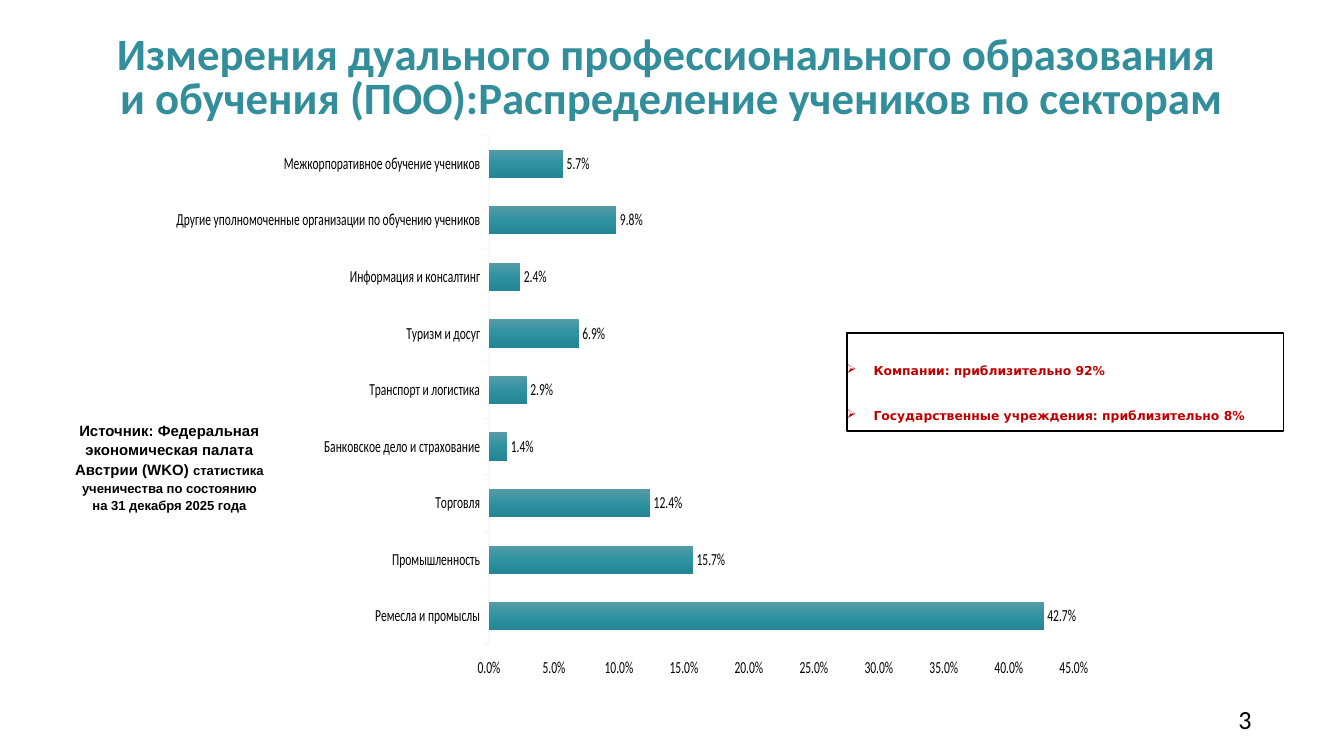
from dataclasses import dataclass

from pptx import Presentation
from pptx.chart.data import CategoryChartData
from pptx.dml.color import RGBColor
from pptx.enum.chart import XL_CHART_TYPE as ChartType, XL_LABEL_POSITION as LabelPos
from pptx.enum.chart import XL_TICK_MARK as TickMark
from pptx.enum.shapes import MSO_SHAPE as Shape
from pptx.enum.text import MSO_ANCHOR as Anchor, MSO_AUTO_SIZE as AutoSize, PP_ALIGN as Align
from pptx.oxml import parse_xml
from pptx.oxml.ns import nsdecls, qn
from pptx.util import Pt

EMU_PER_PX = 9525
TITLE_ONLY = 5


@dataclass(frozen=True)
class Theme:
    ink: str = "000000"
    title: str = "338E9C"
    accent: str = "C00000"
    grid: str = "F2F2F2"
    bar_stops: tuple = ((0, "569CA8"), (50, "2E92A1"), (100, "248594"))
    font: str = "Calibri"
    source_font: str = "Arial"
    bullet_font: str = "DejaVu Sans"
    title_size: float = 24
    number_size: float = 14
    chart_size: float = 9
    source_size: float = 8
    detail_size: float = 7
    bullet_size: float = 6.6


THEME = Theme()

TITLE = [
    "Измерения дуального профессионального образования ",
    "и обучения (ПОО):Распределение учеников по секторам",
]
SECTORS = {
    "Ремесла и промыслы": 0.427,
    "Промышленность": 0.157,
    "Торговля": 0.124,
    "Банковское дело и страхование": 0.014,
    "Транспорт и логистика": 0.029,
    "Туризм и досуг": 0.069,
    "Информация и консалтинг": 0.024,
    "Другие уполномоченные организации по обучению учеников": 0.098,
    "Межкорпоративное обучение учеников": 0.057,
}
SOURCE = "Источник: Федеральная экономическая палата Австрии (WKO) "
SOURCE_DETAIL = "статистика ученичества по состоянию на 31 декабря 2025 года"
SHARES = [
    "Компании: приблизительно 92%",
    "Государственные учреждения: приблизительно 8%",
]


def px(value):
    return value * EMU_PER_PX


def place(shape, left, top, width, height):
    shape.left, shape.top = px(left), px(top)
    shape.width, shape.height = px(width), px(height)


def set_font(font, size, color=THEME.ink, name=THEME.font, bold=False):
    font.size, font.name, font.bold = Pt(size), name, bold
    font.color.rgb = RGBColor.from_string(color)


def add_span(para, text, **style):
    span = para.add_run()
    span.text = text
    set_font(span.font, **style)


def set_frame(frame, wrap=True, anchor=Anchor.TOP, inset=0):
    frame.auto_size = AutoSize.NONE
    frame.word_wrap = wrap
    frame.vertical_anchor = anchor
    if inset is not None:
        frame.margin_left = frame.margin_right = px(inset)
        frame.margin_top = frame.margin_bottom = px(inset)


def write_lines(frame, lines, align, spacing=None, bullet=None, **style):
    """Write one paragraph for each line; return the paragraphs."""
    for index, text in enumerate(lines):
        para = frame.add_paragraph() if index else frame.paragraphs[0]
        para.alignment = align
        para.space_before = Pt(0)
        if spacing:
            para.line_spacing = spacing
        if bullet:
            add_bullet(para, bullet, style["color"])
        add_span(para, text, **style)
    return frame.paragraphs


def add_bullet(para, mark, color):
    props = para._p.get_or_add_pPr()
    props.set("marL", str(px(19)))
    props.set("indent", str(px(-19)))
    props.append(parse_xml(
        f'<a:buClr {nsdecls("a")}><a:srgbClr val="{color}"/></a:buClr>'))
    props.append(parse_xml(f'<a:buChar {nsdecls("a")} char="{mark}"/>'))


def set_line(line, color, width, opacity):
    line.width = Pt(width)
    line.color.rgb = RGBColor.from_string(color)
    solid = line._ln.find(qn("a:solidFill"))
    solid[0].append(parse_xml(
        f'<a:alpha {nsdecls("a")} val="{opacity * 1000}"/>'))


def fill_bars(series):
    stops = "".join(
        f'<a:gs pos="{pos * 1000}"><a:srgbClr val="{color}"/></a:gs>'
        for pos, color in THEME.bar_stops)
    series._element.get_or_add_spPr().insert(0, parse_xml(
        f'<a:gradFill {nsdecls("a")} rotWithShape="1"><a:gsLst>{stops}</a:gsLst>'
        '<a:lin ang="5400000" scaled="0"/></a:gradFill>'))


def set_plot_area(chart, x, y, w, h):
    area = chart._chartSpace.chart.plotArea
    for old in area.findall(qn("c:layout")):
        area.remove(old)
    sizes = "".join(f'<c:{key} val="{value}"/>'
                    for key, value in zip("xywh", (x, y, w, h)))
    area.insert(0, parse_xml(
        f'<c:layout {nsdecls("c")}><c:manualLayout><c:layoutTarget val="inner"/>'
        f'<c:xMode val="edge"/><c:yMode val="edge"/>{sizes}'
        '</c:manualLayout></c:layout>'))


def add_sector_chart(page, left, top, width, height):
    data = CategoryChartData(number_format="0.0%")
    data.categories = list(SECTORS)
    data.add_series("Series 1", SECTORS.values())
    chart = page.shapes.add_chart(
        ChartType.BAR_CLUSTERED, px(left), px(top), px(width), px(height), data).chart
    chart.has_title = chart.has_legend = False
    set_font(chart.font, THEME.chart_size)

    # Bars and their labels
    plot = chart.plots[0]
    plot.gap_width = 100
    plot.vary_by_categories = False
    fill_bars(plot.series[0])
    plot.has_data_labels = True
    labels = plot.data_labels
    labels.show_value = True
    labels.position = LabelPos.OUTSIDE_END
    labels.number_format, labels.number_format_is_linked = "0.0%", False
    set_font(labels.font, THEME.chart_size)

    # Axes
    sectors, shares = chart.category_axis, chart.value_axis
    for axis in (sectors, shares):
        axis.major_tick_mark = TickMark.OUTSIDE
        set_font(axis.tick_labels.font, THEME.chart_size)
    set_line(sectors.format.line, THEME.grid, 1, 54)
    shares.minimum_scale, shares.maximum_scale, shares.major_unit = 0, 0.45, 0.05
    shares.tick_labels.number_format = "0.0%"
    shares.tick_labels.number_format_is_linked = False
    shares.format.line.fill.background()
    shares.has_major_gridlines = True
    set_line(shares.major_gridlines.format.line, THEME.grid, 0.75, 10)
    # Sector names hang to the left of the plot
    set_plot_area(chart, 0, 0.08, 0.86, 0.75)


def add_text(page, left, top, width, height):
    return page.shapes.add_textbox(px(left), px(top), px(width), px(height)).text_frame


def add_shares_box(page, left, top, width, height):
    box = page.shapes.add_shape(
        Shape.RECTANGLE, px(left), px(top), px(width), px(height))
    box.shadow.inherit = False
    box.fill.background()
    box.line.color.rgb = RGBColor.from_string(THEME.ink)
    box.line.width = Pt(0.75)
    set_frame(box.text_frame)
    paras = write_lines(box.text_frame, SHARES, Align.LEFT, Pt(24), bullet="➢",
                        size=THEME.bullet_size, color=THEME.accent,
                        name=THEME.bullet_font, bold=True)
    paras[-1].space_after = Pt(9)


def main():
    deck = Presentation()
    deck.slide_width, deck.slide_height = px(960), px(540)
    page = deck.slides.add_slide(deck.slide_layouts[TITLE_ONLY])

    # Title
    title = page.shapes.title
    place(title, 53, 13, 853, 87)
    set_frame(title.text_frame, wrap=False, anchor=Anchor.MIDDLE)
    write_lines(title.text_frame, TITLE, Align.CENTER, Pt(24),
                size=THEME.title_size, color=THEME.title, bold=True)

    # Slide number
    number = add_text(page, 809, 503, 85, 21)
    set_frame(number, anchor=Anchor.MIDDLE)
    write_lines(number, ["3"], Align.RIGHT, size=THEME.number_size)

    add_sector_chart(page, 126, 58, 709, 485)

    # Source note
    source = add_text(page, 43, 295, 156, 76)
    set_frame(source, inset=None)
    style = dict(name=THEME.source_font, bold=True)
    note = write_lines(source, [SOURCE], Align.CENTER, 1.1,
                       size=THEME.source_size, **style)[0]
    add_span(note, SOURCE_DETAIL, size=THEME.detail_size, **style)

    add_shares_box(page, 605, 238, 312, 70)
    deck.save("out.pptx")


if __name__ == "__main__":
    main()
